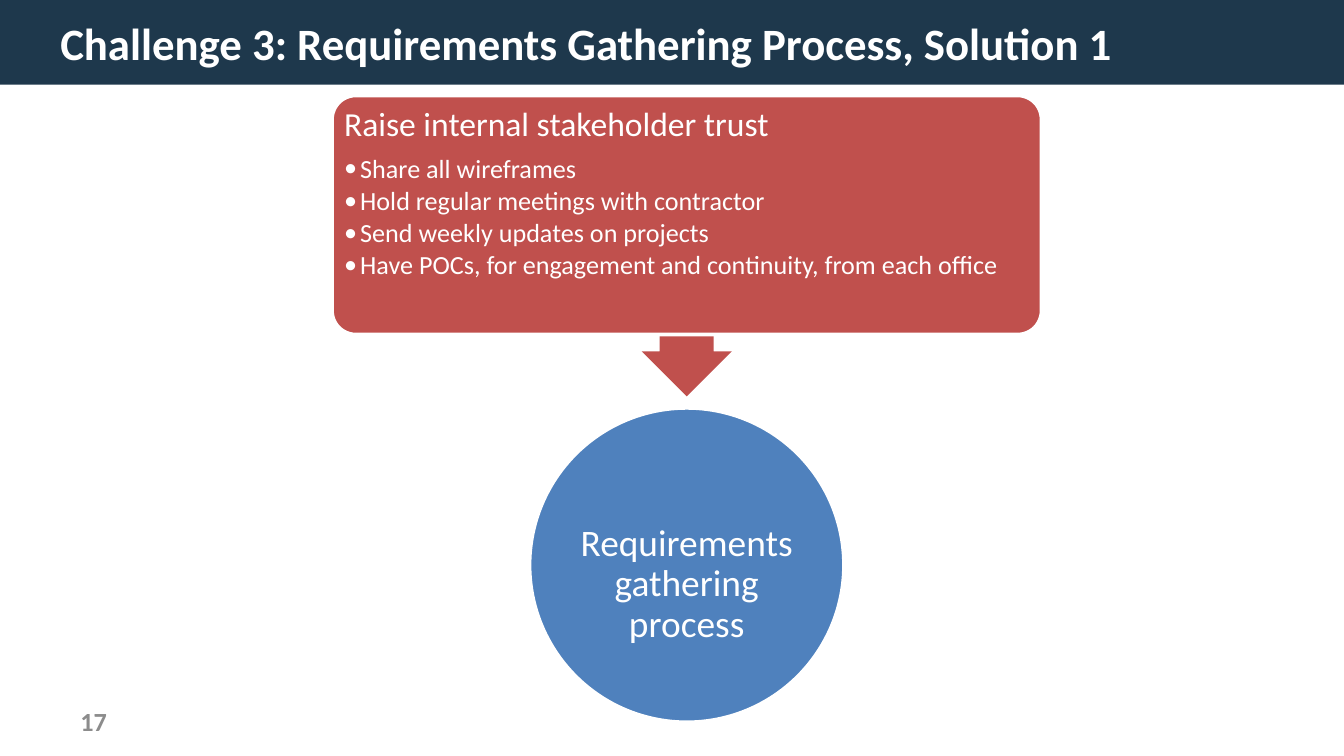
from dataclasses import dataclass

from lxml.etree import SubElement
from pptx import Presentation
from pptx.dml.color import RGBColor
from pptx.enum.shapes import MSO_SHAPE
from pptx.enum.text import MSO_ANCHOR, PP_ALIGN
from pptx.oxml.ns import qn
from pptx.util import Inches, Pt


@dataclass(frozen=True)
class Theme:
    font: str = "Calibri"
    navy: str = "1E384C"
    red: str = "C0504D"
    blue: str = "4F81BD"
    white: str = "FFFFFF"
    gray: str = "8C8C8C"
    title: int = 24
    process: int = 20
    heading: int = 18
    body: int = 14


theme = Theme()
presentation = Presentation()
presentation.slide_width = Inches(10)
presentation.slide_height = Inches(10) * 9 // 16
slide = presentation.slides.add_slide(presentation.slide_layouts[6])
column = presentation.slide_width / 100
row = presentation.slide_height / 56.25


def add_block(preset, box, fill, outline=None, adjustments=()):
    left, top, width, height = box
    shape = slide.shapes.add_shape(
        preset, int(left * column), int(top * row), int(width * column), int(height * row))
    shape.shadow.inherit = False
    shape.fill.solid()
    shape.fill.fore_color.rgb = RGBColor.from_string(fill)
    if outline:
        shape.line.color.rgb = RGBColor.from_string(outline)
        shape.line.width = Pt(2)
    else:
        shape.line.fill.background()
    for index, adjustment in enumerate(adjustments):
        shape.adjustments[index] = adjustment


def add_text(box, lines, sizes, color, bold=False, anchor=MSO_ANCHOR.MIDDLE, margin=None):
    left, top, width, height = box
    text_box = slide.shapes.add_textbox(
        int(left * column), int(top * row), int(width * column), int(height * row))
    frame = text_box.text_frame
    frame.word_wrap = True
    frame.vertical_anchor = anchor
    if margin is not None:
        frame.margin_left = frame.margin_right = Inches(margin)
        frame.margin_top = frame.margin_bottom = Inches(margin)
    frame.text = "\n".join(lines)
    for paragraph, size in zip(frame.paragraphs, sizes):
        for run in paragraph.runs:
            run.font.name = theme.font
            run.font.size = Pt(size)
            run.font.bold = bold
            run.font.color.rgb = RGBColor.from_string(color)
    return frame.paragraphs


add_block(MSO_SHAPE.RECTANGLE, (0, 0, 100, 6.3), theme.navy)
add_text((5, 52.15, 22.5, 3), ["17"], [theme.body], theme.gray, bold=True)
add_text((3.5, 0.55, 91.5, 5.2), ["Challenge 3: Requirements Gathering Process, Solution 1"],
         [theme.title], theme.white, bold=True)

add_block(MSO_SHAPE.OVAL, (39.4, 30.35, 23.4, 23.4), theme.blue, theme.white)
process = add_text((42.8, 35.2, 16.6, 16.6), ["Requirements gathering process"],
                   [theme.process], theme.white, margin=0.01)
process[0].alignment = PP_ALIGN.CENTER
process[0].line_spacing = 0.9

add_block(MSO_SHAPE.DOWN_ARROW, (47.75, 16, 6.7, 13.5), theme.red, adjustments=(0.6, 0.5))
add_block(MSO_SHAPE.ROUNDED_RECTANGLE, (24.7, 7.1, 52.8, 17.8), theme.red, theme.white, (0.1,))

actions = [
    "Share all wireframes",
    "Hold regular meetings with contractor",
    "Send weekly updates on projects",
    "Have POCs, for engagement and continuity, from each office",
]
heading, *bullets = add_text(
    (25.2, 7.6, 51.7, 16.8), ["Raise internal stakeholder trust", *actions],
    [theme.heading] + [theme.body] * len(actions), theme.white,
    anchor=MSO_ANCHOR.TOP, margin=0.04)
heading.line_spacing = 0.9
heading.space_after = Pt(0.35 * theme.heading)
for paragraph in bullets:
    paragraph.level = 1
    paragraph.line_spacing = 0.9
    paragraph.space_after = Pt(0.15 * theme.body)
    properties = paragraph._p.get_or_add_pPr()
    properties.set("marL", str(Inches(0.12)))
    properties.set("indent", str(Inches(-0.12)))
    SubElement(properties, qn("a:buFont"), typeface=theme.font)
    SubElement(properties, qn("a:buChar"), char="•")
    paragraph.font.size = Pt(theme.body)

presentation.save("out.pptx")
